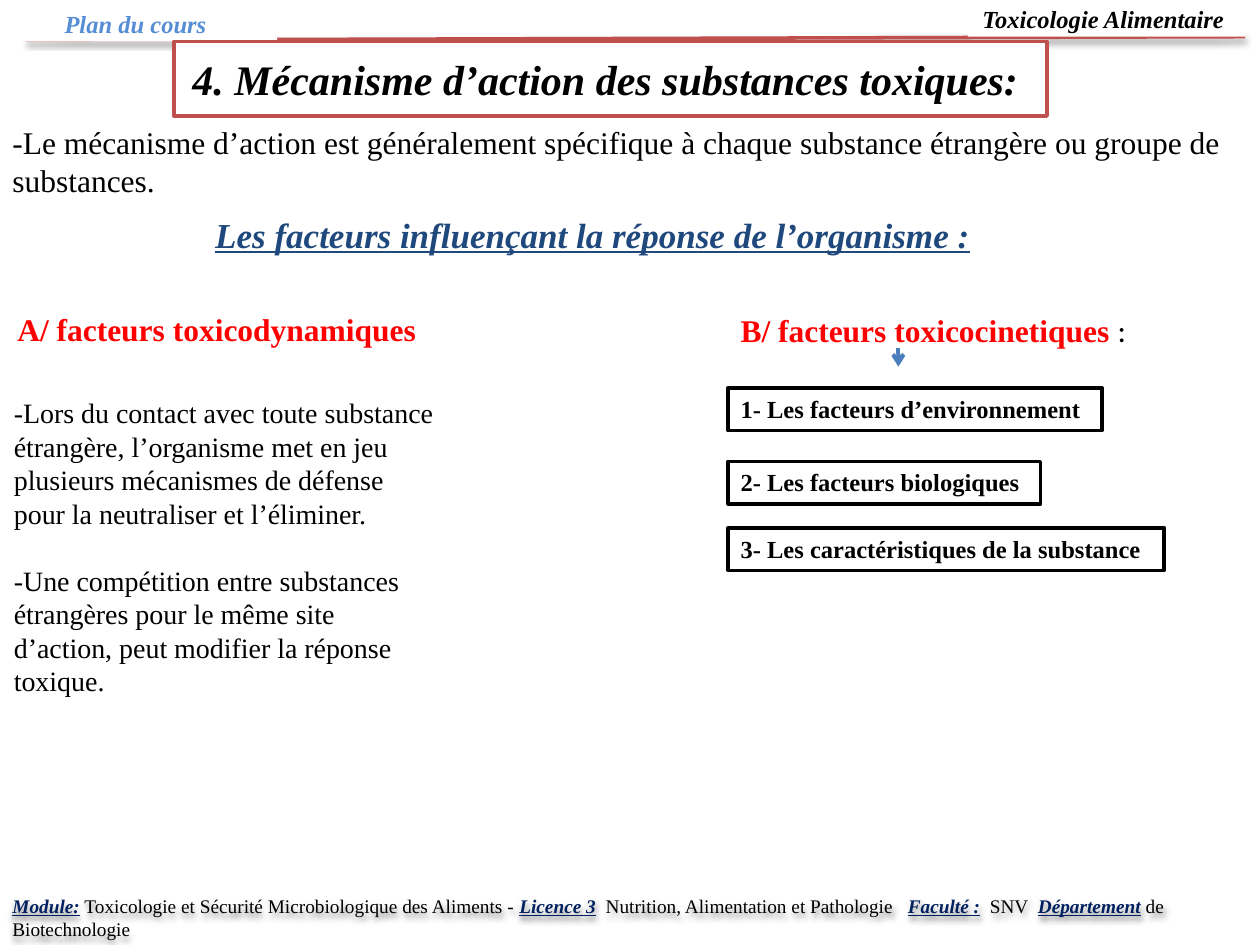
from lxml.etree import SubElement
from pptx import Presentation
from pptx.dml.color import RGBColor
from pptx.enum.shapes import MSO_CONNECTOR as Connector, MSO_SHAPE as Shape
from pptx.enum.text import MSO_ANCHOR as Anchor, PP_ALIGN as Align
from pptx.oxml.ns import qn
from pptx.util import Cm, Pt

SERIF = "Times New Roman"
BLACK, WHITE, RED, BRICK, NAVY = "000000", "FFFFFF", "FF0000", "C0504D", "002060"


def color(value):
    return RGBColor.from_string(value)


def add_text(left, top, width, height, paragraphs, wrap=True, align=Align.LEFT,
             anchor=Anchor.TOP, filled=False, border=None):
    place = Cm(left), Cm(top), Cm(width), Cm(height)
    if filled:
        box = slide.shapes.add_shape(Shape.RECTANGLE, *place)
        box.shadow.inherit = False
        box.fill.solid()
        box.fill.fore_color.rgb = color(WHITE)
        if border:
            box.line.color.rgb = color(border)
            box.line.width = Pt(2)
        else:
            box.line.fill.background()
    else:
        box = slide.shapes.add_textbox(*place)
    frame = box.text_frame
    frame.word_wrap = wrap
    frame.vertical_anchor = anchor
    for index, runs in enumerate(paragraphs):
        paragraph = frame.add_paragraph() if index else frame.paragraphs[0]
        paragraph.alignment = align
        if index:
            paragraph.space_before = Pt(19)
        for words, size, ink, style, face in runs:
            run = paragraph.add_run()
            run.text = words
            run.font.name = face
            run.font.size = Pt(size)
            run.font.color.rgb = color(ink)
            run.font.bold = "b" in style
            run.font.italic = "i" in style
            run.font.underline = "u" in style
    return box


presentation = Presentation()
presentation.slide_width, presentation.slide_height = Cm(25.4), Cm(19.05)
slide = presentation.slides.add_slide(presentation.slide_layouts[6])

footer = add_text(0, 17.91, 25.53, 1.17, [[
    ("Module:", 11, NAVY, "biu", SERIF),
    (" Toxicologie et Sécurité Microbiologique des Aliments - ", 11, BLACK, "", SERIF),
    ("Licence 3", 11, NAVY, "biu", SERIF),
    ("  Nutrition, Alimentation et Pathologie   ", 11, BLACK, "", SERIF),
    ("Faculté :", 11, NAVY, "biu", SERIF),
    ("  SNV  ", 11, BLACK, "", SERIF),
    ("Département", 11, NAVY, "biu", SERIF),
    (" de Biotechnologie", 11, BLACK, "", SERIF),
]], anchor=Anchor.MIDDLE)

header_rule = slide.shapes.add_connector(
    Connector.STRAIGHT, Cm(0.51), Cm(0.81), Cm(25.1), Cm(0.74))
header_rule.line.color.rgb = color(BRICK)
header_rule.line.width = Pt(2)

for shaded in (footer, header_rule):
    effects = SubElement(shaded._element.spPr, qn("a:effectLst"))
    shadow = SubElement(effects, qn("a:outerShdw"), blurRad=str(Pt(3.1)),
                        dist=str(Pt(1.6)), dir="5400000", rotWithShape="0")
    shade = SubElement(shadow, qn("a:srgbClr"), val=BLACK)
    SubElement(shade, qn("a:alpha"), val="38000")

for left, top, width, height, words, size, ink, border in (
    (19.51, 0, 5.59, 0.74, "Toxicologie Alimentaire ", 14, BLACK, None),
    (0, 0.1, 5.59, 0.74, "Plan du cours ", 14, "558ED5", None),
    (3.51, 0.84, 17.6, 1.5, "4. Mécanisme d’action des substances toxiques: ", 24, BLACK, BRICK),
):
    add_text(left, top, width, height, [[(words, size, ink, "bi", SERIF)]],
             align=Align.CENTER, anchor=Anchor.MIDDLE, filled=True, border=border)

add_text(0, 2.36, 25.4, 1.8, [[
    ("-Le mécanisme d’action est généralement spécifique à chaque substance étrangère "
     "ou groupe de substances.", 18, BLACK, "", SERIF)]])
add_text(4.09, 4.17, 15.8, 1.12, [[
    ("Les facteurs influençant la réponse de l’organisme :", 20, "1F497D", "biu", SERIF)]])

add_text(0.1, 6.12, 8.64, 1.02, [[
    ("A/ facteurs toxicodynamiques", 18, RED, "b", SERIF)]], wrap=False)
add_text(0.03, 7.85, 9.07, 6.4, [
    [("-Lors du contact avec toute substance étrangère, l’organisme met en jeu plusieurs "
      "mécanismes de défense pour la neutraliser et l’éliminer.", 16, BLACK, "", SERIF)],
    [("-Une compétition entre substances étrangères pour le même site d’action, "
      "peut modifier la réponse toxique.", 16, BLACK, "", SERIF)],
])

add_text(14.68, 6.15, 8.36, 1.02, [[
    ("B/ facteurs toxicocinetiques ", 18, RED, "b", SERIF),
    (":", 18, BLACK, "", "Calibri")]], wrap=False)

arrow = slide.shapes.add_connector(
    Connector.STRAIGHT, Cm(18.11), Cm(7.01), Cm(18.11), Cm(7.39))
arrow.line.color.rgb = color("4B7EBC")
arrow.line.width = Pt(2.25)
SubElement(arrow.line._get_or_add_ln(), qn("a:tailEnd"), type="arrow")
SubElement(arrow._element.spPr, qn("a:effectLst"))

for top, width, factor in (
    (7.82, 7.54, "1- Les facteurs d’environnement"),
    (9.3, 6.3, "2- Les facteurs biologiques"),
    (10.64, 8.79, "3- Les caractéristiques de la substance"),
):
    add_text(14.68, top, width, 0.86, [[(factor, 14, BLACK, "b", SERIF)]],
             wrap=False, filled=True, border=BLACK)

presentation.save("out.pptx")
